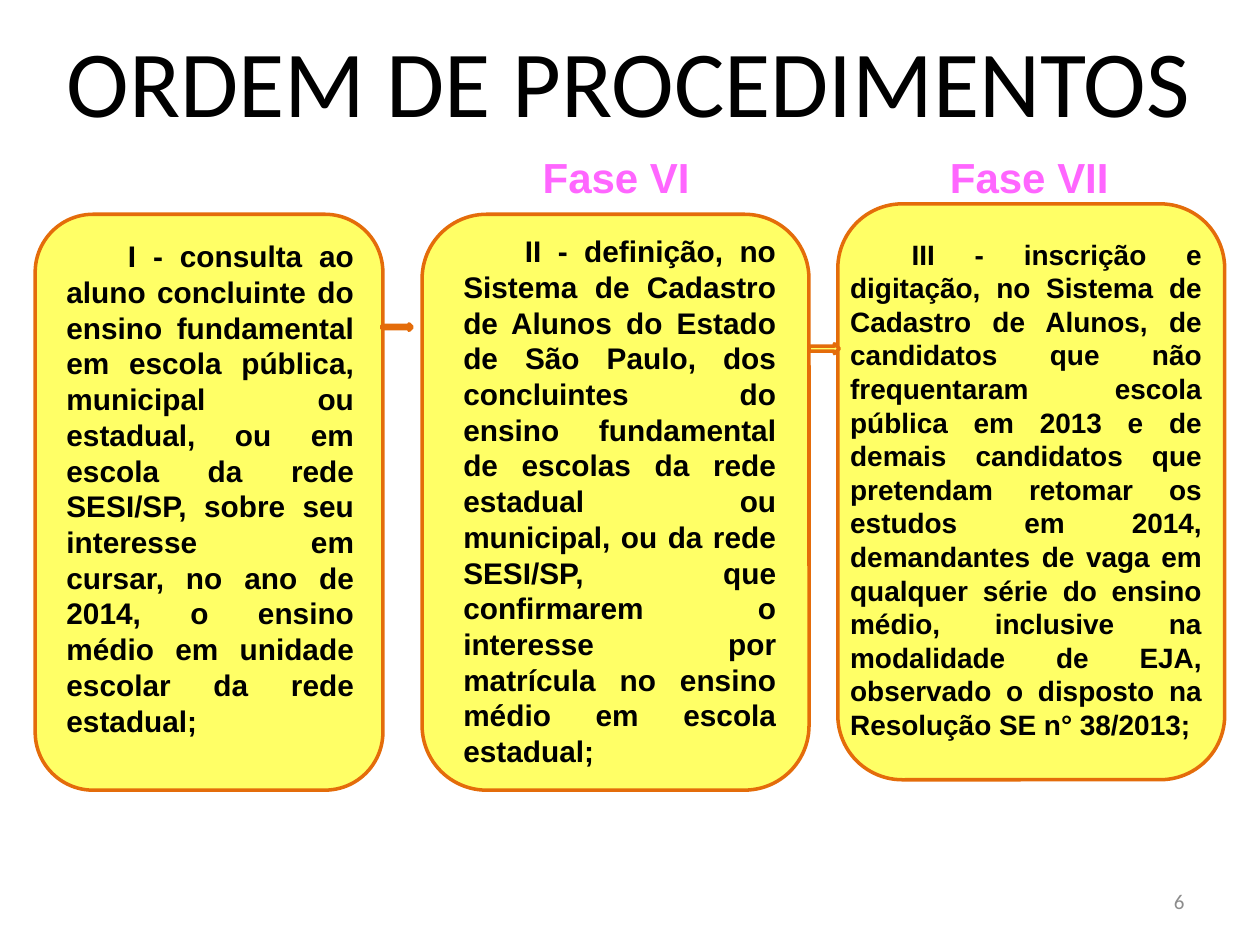
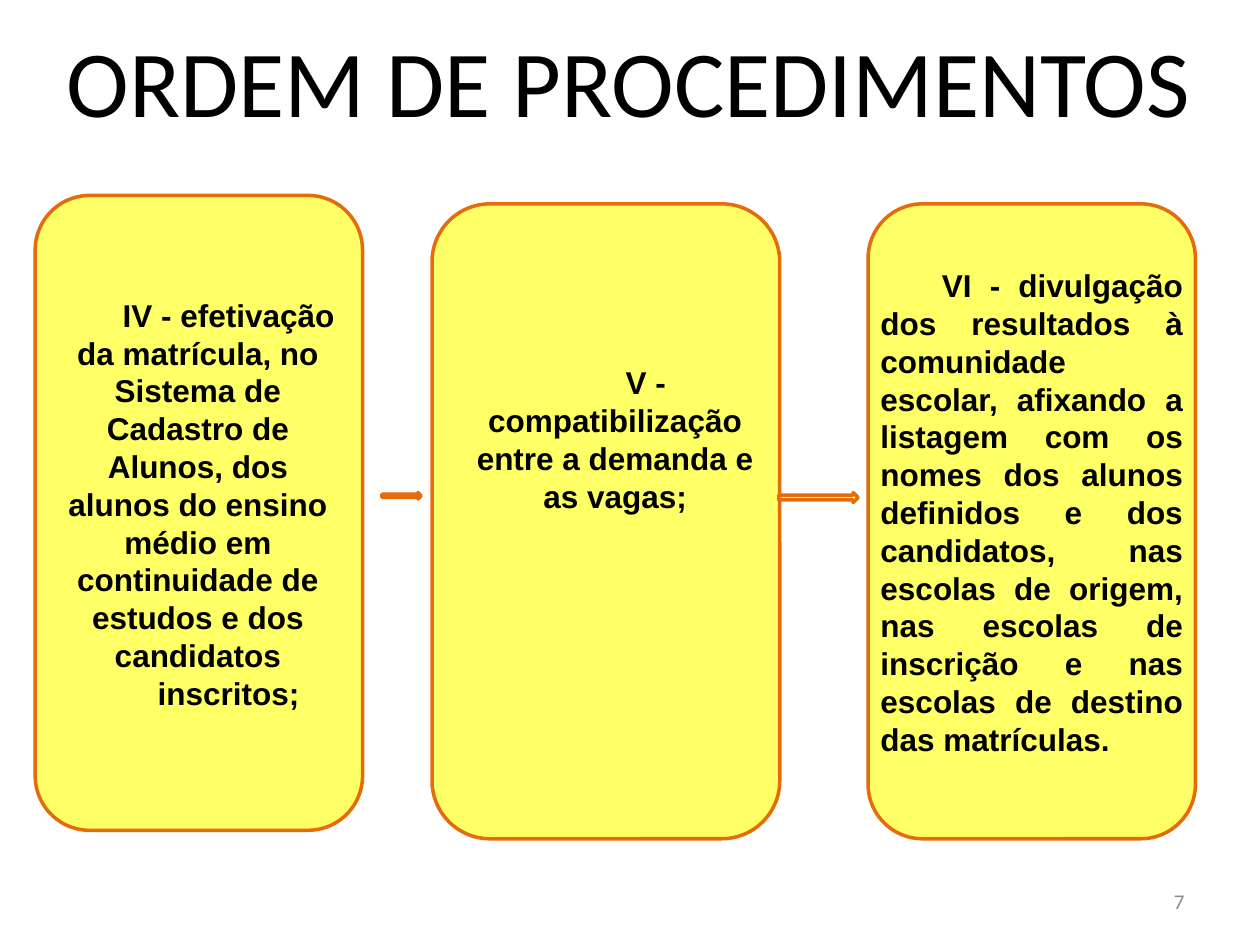
from pptx import Presentation
from pptx.dml.color import RGBColor
from pptx.enum.shapes import MSO_SHAPE
from pptx.enum.text import MSO_ANCHOR, MSO_AUTO_SIZE, PP_ALIGN
from pptx.util import Cm, Pt

# Shared colours and text formats
BLACK = RGBColor(0x00, 0x00, 0x00)
GREY = RGBColor(0x8C, 0x8C, 0x8C)
YELLOW = RGBColor(0xFF, 0xFF, 0x66)
ORANGE = RGBColor(0xE4, 0x6C, 0x0A)
PINK = RGBColor(0xFF, 0x66, 0xFF)

TITLE = "ORDEM DE PROCEDIMENTOS"
TITLE_FONT = {"name": "Calibri", "size": Pt(54), "color": BLACK}
NUMBER_FONT = {"name": "Calibri", "size": Pt(12), "color": GREY}
PHASE_FONT = {"name": "Arial", "size": Pt(24), "bold": True, "color": PINK}
STEP_FONT = {"name": "Arial", "bold": True, "color": BLACK}
FIRST_LINE_INDENT = Cm(1.24)

# Places are left, top, width, height in centimetres
PROCEDURES = [
    {
        "number": 6,
        "panels": [(0.71, 4.32, 7.01, 11.61), (8.51, 4.32, 7.8, 11.61),
                   (16.89, 4.11, 7.8, 11.61)],
        "arrows": [(7.7, 6.53, 0.61, 0.13), (16.31, 6.93, 0.61, 0.2)],
        "phases": [("Fase VI", (10.69, 2.92, 3.61, 1.3)),
                   ("Fase VII", (18.9, 2.92, 3.73, 1.3))],
        "steps": [
            ((1.09, 4.62, 6.3, 10.44), 17, PP_ALIGN.JUSTIFY, [
                "I - consulta ao aluno concluinte do ensino fundamental em "
                "escola pública, municipal ou estadual, ou em escola da rede "
                "SESI/SP, sobre seu interesse em cursar, no ano de 2014, o "
                "ensino médio em unidade escolar da rede estadual;"]),
            ((9.09, 4.52, 6.81, 11.15), 17, PP_ALIGN.JUSTIFY, [
                "II - definição, no Sistema de Cadastro de Alunos do Estado "
                "de São Paulo, dos concluintes do ensino fundamental de "
                "escolas da rede estadual ou municipal, ou da rede SESI/SP, "
                "que confirmarem o interesse por matrícula no ensino médio "
                "em escola estadual;"]),
            ((16.89, 4.6, 7.59, 10.52), 16, PP_ALIGN.JUSTIFY, [
                "III - inscrição e digitação, no Sistema de Cadastro de "
                "Alunos, de candidatos que não frequentaram escola pública "
                "em 2013 e de demais candidatos que pretendam retomar os "
                "estudos em 2014, demandantes de vaga em qualquer série do "
                "ensino médio, inclusive na modalidade de EJA, observado o "
                "disposto na Resolução SE n° 38/2013;"]),
        ],
    },
    {
        "number": 7,
        "panels": [(0.71, 3.94, 6.6, 12.8), (8.71, 4.11, 7.01, 12.8),
                   (17.5, 4.11, 6.6, 12.8)],
        "arrows": [(7.7, 9.93, 0.79, 0.13), (15.7, 9.93, 1.6, 0.2)],
        "phases": [],
        "steps": [
            ((0.89, 5.33, 6.2, 9.65), 18, PP_ALIGN.CENTER, [
                "IV - efetivação da matrícula, no Sistema de Cadastro de "
                "Alunos, dos alunos do ensino médio em continuidade de "
                "estudos e dos candidatos",
                "inscritos;"]),
            ((9.3, 6.71, 6.2, 4.27), 18, PP_ALIGN.CENTER, [
                "V - compatibilização entre a demanda e as vagas;"]),
            ((17.5, 4.72, 6.6, 11.2), 18, PP_ALIGN.JUSTIFY, [
                "VI - divulgação dos resultados à comunidade escolar, "
                "afixando a listagem com os nomes dos alunos definidos e dos "
                "candidatos, nas escolas de origem, nas escolas de inscrição "
                "e nas escolas de destino das matrículas."]),
        ],
    },
]


def format_font(font, formats):
    for attribute, value in formats.items():
        if attribute == "color":
            font.color.rgb = value
        else:
            setattr(font, attribute, value)


def write_text(frame, paragraphs, formats, align=PP_ALIGN.LEFT,
               anchor=MSO_ANCHOR.TOP, wrap=True, indent=0):
    frame.word_wrap = wrap
    frame.auto_size = MSO_AUTO_SIZE.NONE
    frame.vertical_anchor = anchor
    for index, words in enumerate(paragraphs):
        paragraph = frame.add_paragraph() if index else frame.paragraphs[0]
        paragraph.text = words
        paragraph.alignment = align
        if indent:
            properties = paragraph._p.get_or_add_pPr()
            properties.set("marL", "0")
            properties.set("indent", str(int(indent)))
        format_font(paragraph.font, formats)


def add_text(slide, place, paragraphs, formats, **layout):
    box = slide.shapes.add_textbox(*map(Cm, place))
    write_text(box.text_frame, paragraphs, formats, **layout)


def add_outlined(slide, preset, place):
    """Yellow shape with an orange outline, for panels and arrows."""
    shape = slide.shapes.add_shape(preset, *map(Cm, place))
    shape.shadow.inherit = False
    shape.fill.solid()
    shape.fill.fore_color.rgb = YELLOW
    shape.line.color.rgb = ORANGE
    shape.line.width = Pt(2)


def add_heading(slide, number):
    title = slide.shapes.title
    place = {"left": Cm(1.09), "top": Cm(0.33),
             "width": Cm(23.39), "height": Cm(2.57)}
    for attribute, value in place.items():
        setattr(title, attribute, value)
    write_text(title.text_frame, [TITLE], TITLE_FONT, wrap=False)
    add_text(slide, (18.2, 17.65, 5.93, 1.02), [str(number)], NUMBER_FONT,
             align=PP_ALIGN.RIGHT, anchor=MSO_ANCHOR.MIDDLE)


def add_procedure_slide(deck, procedure):
    slide = deck.slides.add_slide(deck.slide_layouts[5])
    add_heading(slide, procedure["number"])

    # Panels and the arrows between them
    for place in procedure["panels"]:
        add_outlined(slide, MSO_SHAPE.ROUNDED_RECTANGLE, place)
    for place in procedure["arrows"]:
        add_outlined(slide, MSO_SHAPE.RIGHT_ARROW, place)

    # Step texts and phase labels
    for place, size, align, paragraphs in procedure["steps"]:
        add_text(slide, place, paragraphs, {**STEP_FONT, "size": Pt(size)},
                 align=align, anchor=MSO_ANCHOR.MIDDLE,
                 indent=FIRST_LINE_INDENT)
    for phase, place in procedure["phases"]:
        add_text(slide, place, [phase], PHASE_FONT, wrap=False)


def main():
    deck = Presentation()
    deck.slide_width, deck.slide_height = Cm(25.4), Cm(19.05)
    for procedure in PROCEDURES:
        add_procedure_slide(deck, procedure)
    deck.save("out.pptx")


if __name__ == "__main__":
    main()
